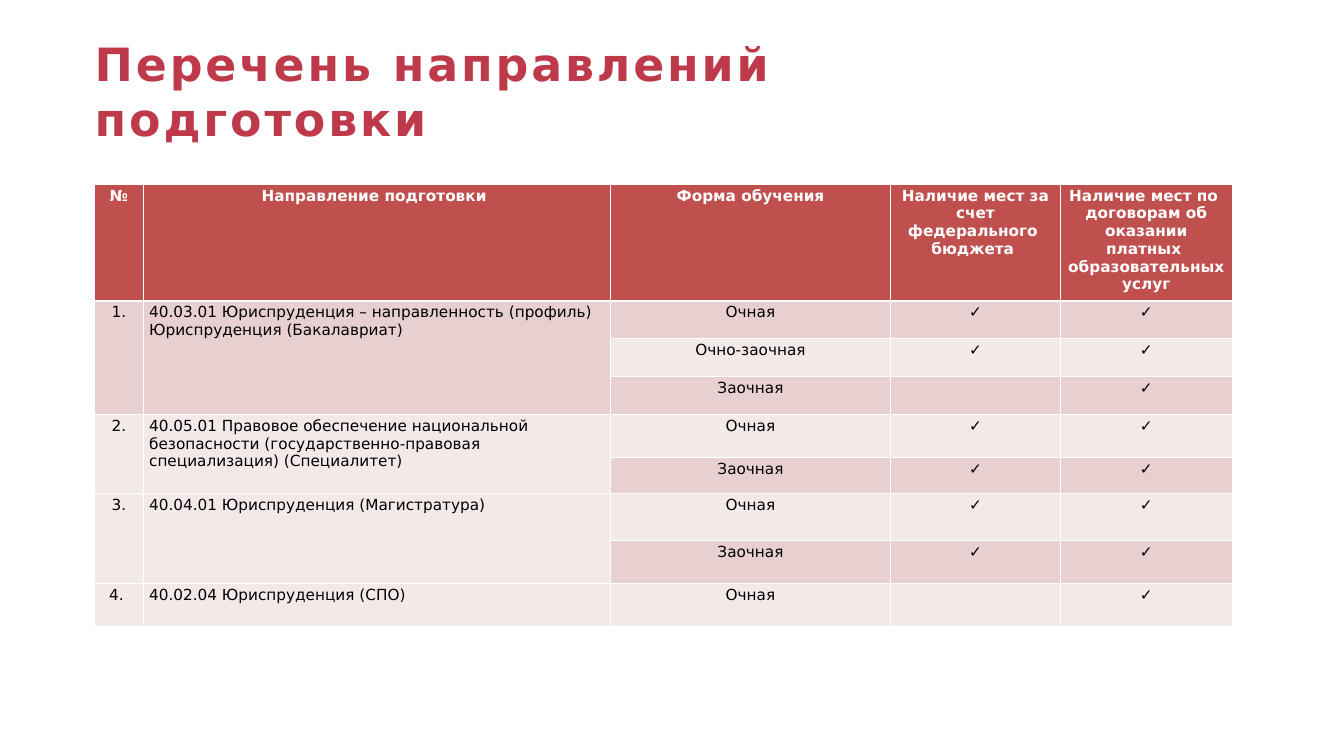
from lxml import etree
from pptx import Presentation, util as u
from pptx.dml import color
from pptx.enum import text
from pptx.oxml import ns

WIDTH, HEIGHT = 21.99, 12.37
LEFT = 1.55
FONT = "DejaVu Sans"
RED, HEADER, DARK, LIGHT = "BE3949", "C0504D", "E8D0D0", "F4E9E9"
WHITE, BLACK = "FFFFFF", "000000"
CENTER, START = text.PP_ALIGN.CENTER, text.PP_ALIGN.LEFT
CHECK = "✓"

columns = [0.79, 7.65, 4.58, 2.78, 2.81]
rows = [1.91, 0.62, 0.62, 0.62, 0.71, 0.58, 0.78, 0.7, 0.7]

headings = [
    "№",
    "Направление подготовки ",
    "Форма обучения",
    "Наличие мест за счет федерального \nбюджета ",
    "Наличие мест по \nдоговорам об оказании платных \nобразовательных \nуслуг",
]

# Number, programme, then (form of study, budget places, paid places)
programmes = [
    ("1.", "40.03.01 Юриспруденция – направленность (профиль) Юриспруденция (Бакалавриат)",
     [("Очная", CHECK, CHECK), ("Очно-заочная", CHECK, CHECK), ("Заочная", "", CHECK)]),
    ("2.", "40.05.01 Правовое обеспечение национальной\n"
           "безопасности (государственно-правовая специализация) (Специалитет)",
     [("Очная", CHECK, CHECK), ("Заочная", CHECK, CHECK)]),
    ("3.", "40.04.01 Юриспруденция (Магистратура)",
     [("Очная", CHECK, CHECK), ("Заочная", CHECK, CHECK)]),
    ("4. ", "40.02.04 Юриспруденция (СПО)",
     [("Очная", "", CHECK)]),
]


def rgb(value):
    return color.RGBColor.from_string(value)


def write(frame, words, align, size, ink, bold):
    frame.text = words
    for paragraph in frame.paragraphs:
        paragraph.alignment = align
        for font in [paragraph.font] + [run.font for run in paragraph.runs]:
            for key, value in {"name": FONT, "size": u.Pt(size), "bold": bold}.items():
                setattr(font, key, value)
            font.color.rgb = rgb(ink)


# Slide
deck = Presentation()
deck.slide_width, deck.slide_height = u.Inches(WIDTH), u.Inches(HEIGHT)
slide = deck.slides.add_slide(deck.slide_layouts[6])

# Title
title = slide.shapes.add_textbox(
    u.Inches(LEFT), u.Inches(0.52), u.Inches(16.58), u.Inches(3.18)).text_frame
title_format = {"word_wrap": True, "margin_left": 0, "margin_right": 0,
                "margin_top": u.Inches(0.06), "margin_bottom": 0}
for key, value in title_format.items():
    setattr(title, key, value)
write(title, "Перечень направлений подготовки", START, 54, RED, True)
title.paragraphs[0].runs[0].font._element.set("spc", "340")

# Table grid
table = slide.shapes.add_table(
    len(rows), len(columns), u.Inches(LEFT), u.Inches(3.01),
    u.Inches(sum(columns)), u.Inches(sum(rows))).table
table.horz_banding = False
for column, width in zip(table.columns, columns):
    column.width = u.Inches(width)
for row, height in zip(table.rows, rows):
    row.height = u.Inches(height)

# Borders and banded fills
for r in range(len(rows)):
    for c in range(len(columns)):
        cell = table.cell(r, c)
        properties = cell._tc.get_or_add_tcPr()
        for side in "LRTB":
            points = 3 if (r, side) in ((0, "B"), (1, "T")) else 1
            border = etree.SubElement(properties, ns.qn(f"a:ln{side}"), w=str(u.Pt(points)))
            paint = etree.SubElement(border, ns.qn("a:solidFill"))
            etree.SubElement(paint, ns.qn("a:srgbClr"), val=WHITE)
        cell.fill.solid()
        cell.fill.fore_color.rgb = rgb(HEADER if r == 0 else DARK if r % 2 else LIGHT)

# Headings
for c, heading in enumerate(headings):
    write(table.cell(0, c).text_frame, heading, CENTER, 18, WHITE, True)

# Programmes, each spanning its forms of study
first = 1
for number, programme, forms in programmes:
    for c, (words, align) in enumerate([(number, CENTER), (programme, START)]):
        cell = table.cell(first, c)
        if len(forms) > 1:
            cell.merge(table.cell(first + len(forms) - 1, c))
        write(cell.text_frame, words, align, 18, BLACK, False)
    for r, form in enumerate(forms, first):
        for c, words in enumerate(form, 2):
            write(table.cell(r, c).text_frame, words, CENTER, 18, BLACK, False)
    first += len(forms)

deck.save("out.pptx")
